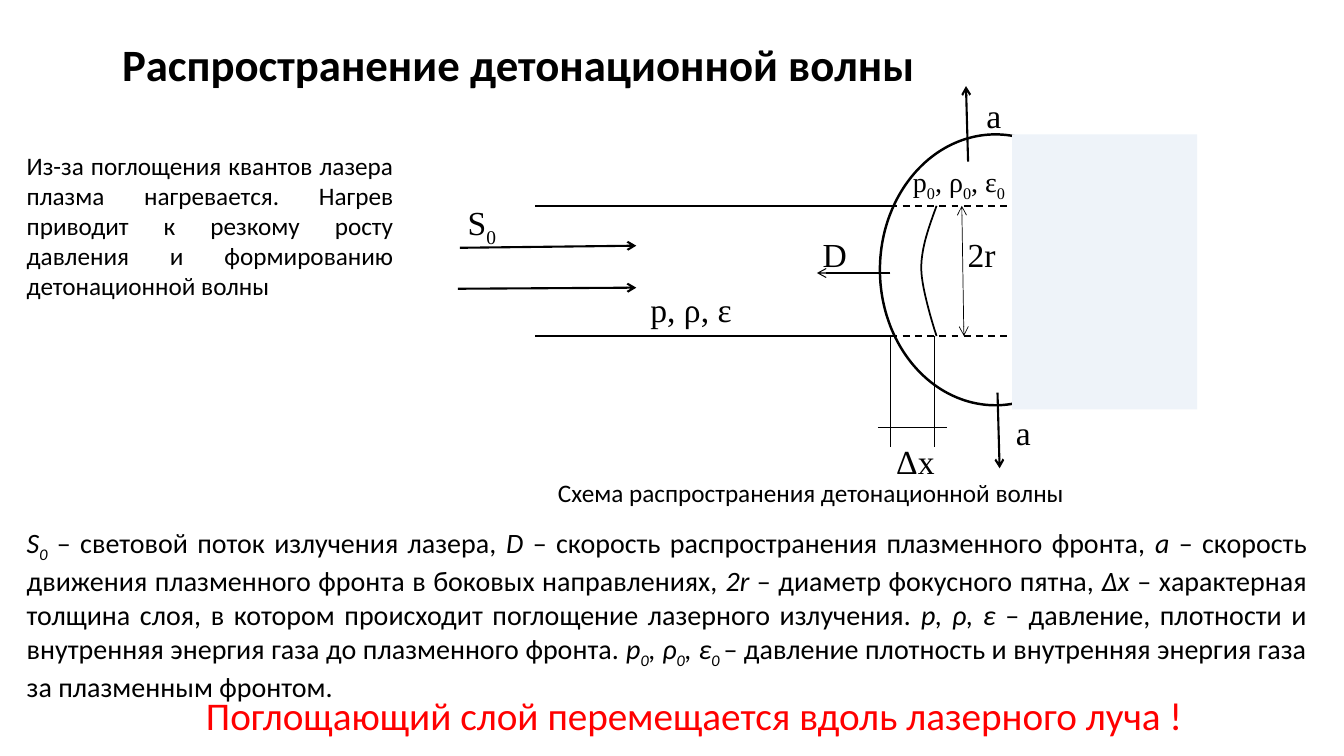
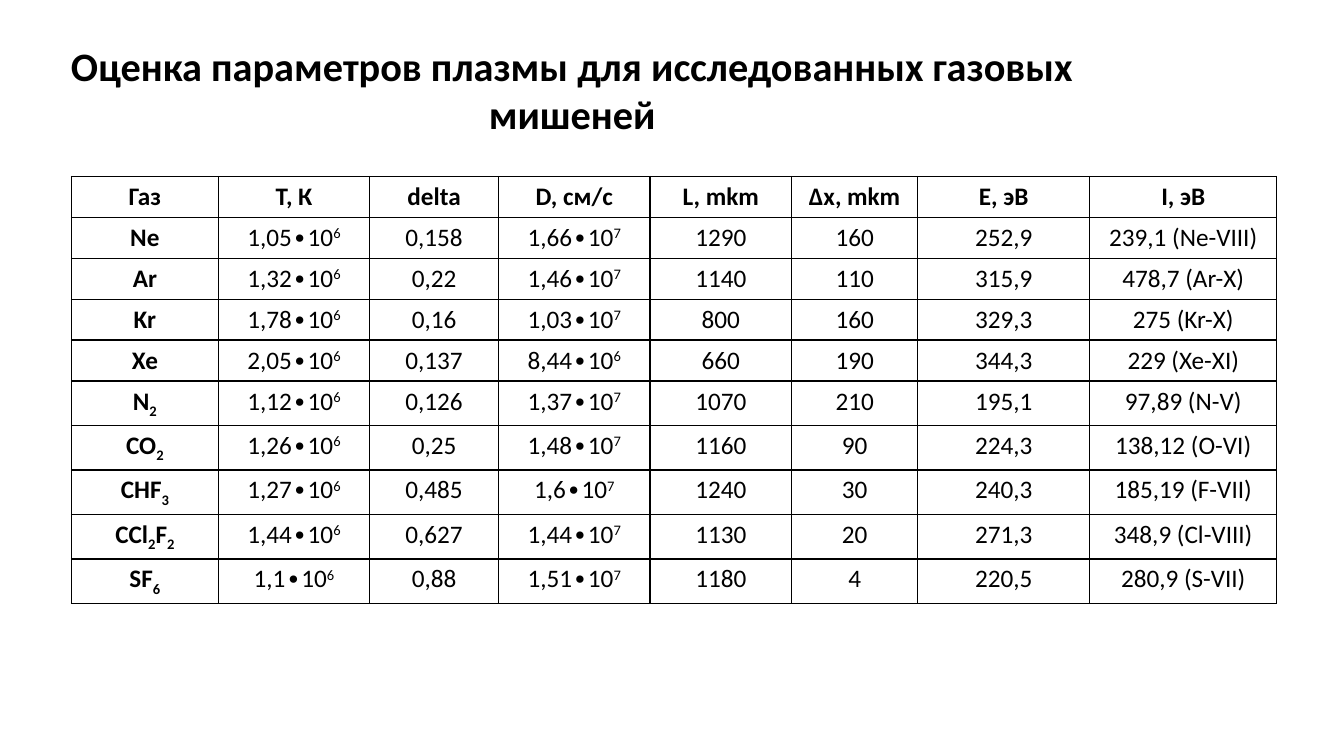
import pptx
import pptx.dml.color
import pptx.enum.dml
import pptx.enum.shapes
import pptx.enum.text
import pptx.oxml
import pptx.oxml.ns
import pptx.util

ALIGN = pptx.enum.text.PP_ALIGN
SHAPE = pptx.enum.shapes.MSO_SHAPE
RGB = pptx.dml.color.RGBColor.from_string
Pt = pptx.util.Pt


class Theme:
    ink, red, pale = RGB("000000"), RGB("FF0000"), RGB("EEF3F9")
    sans, serif = "Calibri", "Times New Roman"
    body = dict(name=sans, size=Pt(18))
    note = dict(name=sans, size=Pt(20))
    call = dict(name=sans, size=Pt(28))
    head = dict(name=sans, size=Pt(32), bold=True)
    long = dict(name=sans, size=Pt(28.8), bold=True)
    mark = dict(name=serif, size=Pt(24))
    small = dict(name=serif, size=Pt(20))


deck = pptx.Presentation()
deck.slide_width = pptx.util.Inches(13.333)
deck.slide_height = pptx.util.Inches(7.5)

# All lengths are cells of a grid with 64 columns and 36 rows
CELL = deck.slide_height / 36


def write(par, text, look, ink=Theme.ink, align=ALIGN.LEFT):
    """Fill a paragraph; *italic*, _subscript_ and ^superscript^ are toggles."""
    par.alignment = align
    live, piece = set(), ""
    for sign in text + "\n":
        if sign not in "*_^\n":
            piece += sign
            continue
        if piece:
            run = par.add_run()
            run.text = piece
            for key, value in dict(look, italic="*" in live).items():
                setattr(run.font, key, value)
            run.font.color.rgb = ink
            for key, base in (("_", "-25000"), ("^", "30000")):
                if key in live:
                    run._r.get_or_add_rPr().set("baseline", base)
        live ^= {sign}
        piece = ""


def put(page, at, text, look, ink=Theme.ink, align=ALIGN.LEFT):
    """Add a text box at a place given in cells."""
    box = page.shapes.add_textbox(*(int(n * CELL) for n in at))
    box.text_frame.word_wrap = True
    write(box.text_frame.paragraphs[0], text, look, ink, align)
    return box.text_frame


# Pages and their titles
pages = []
for at, text, look in (
    ((0, 0.6, 49.4, 4.9), "Распространение детонационной волны", Theme.head),
    ((0.7, 2.2, 53.1, 4.1),
     "Оценка параметров плазмы для исследованных газовых мишеней", Theme.long),
):
    page = deck.slides.add_slide(deck.slide_layouts[6])
    frame = put(page, at, text, look, align=ALIGN.CENTER)
    frame.vertical_anchor = pptx.enum.text.MSO_ANCHOR.MIDDLE
    pages.append(page)
wave, gases = pages

# Wave front: outline of the plasma
top, low = 9.8, 16
left, front, back, end = 25.5, 42.4, 44.5, 49.6
oval = wave.shapes.add_shape(
    SHAPE.OVAL, *(int(n * CELL) for n in (41.9, 6.4, 11, 12.9)))

# Curved layer: two Bezier arcs drawn in short steps
arcs = (
    ((44.6, top), (44.26, 10.75), (43.87, 11.76), (43.87, 12.77)),
    ((43.87, 12.77), (43.87, 13.82), (44.6, low), (44.6, low)),
)
steps = 16
dots = []
for arc in arcs:
    for step in range(1, steps + 1):
        t = step / steps
        rate = ((1 - t) ** 3, 3 * t * (1 - t) ** 2, 3 * t * t * (1 - t), t ** 3)
        dots.append(tuple(
            int(CELL * sum(k * dot[axis] for k, dot in zip(rate, arc)))
            for axis in (0, 1)))
trace = wave.shapes.build_freeform(*(int(n * CELL) for n in arcs[0][0]))
trace.add_line_segments(dots, close=False)
curve = trace.convert_to_shape()
for shape, width in ((oval, 1.75), (curve, 1.25)):
    shape.shadow.inherit = False
    shape.fill.background()
    shape.line.color.rgb = Theme.ink
    shape.line.width = Pt(width)

# Lines and arrows: from, to, width, arrow ends, dashed
for x1, y1, x2, y2, width, tips, dash in (
    (left, top, front, top, 1.75, (), False),
    (left, low, front, low, 1.75, (), False),
    (front, top, end, top, 1.25, (), True),
    (front, low, end, low, 1.25, (), True),
    (front, low, front, 21.3, 1, (), False),
    (back, low, back, 21.3, 1, (), False),
    (41.8, 20.35, 45.1, 20.35, 0.5, (), False),
    (45.8, top, 45.9, low, 0.5, ("headEnd", "tailEnd"), False),
    (21.9, 11.8, 30.3, 11.7, 1.5, ("tailEnd",), False),
    (21.8, 13.75, 30.3, 13.7, 1.5, ("tailEnd",), False),
    (front, 13, 38.9, 13, 0.75, ("tailEnd",), False),
    (47.5, 18.7, 47.6, 22.3, 1.5, ("tailEnd",), False),
    (46.1, 7.7, 46, 4.1, 1.5, ("tailEnd",), False),
):
    line = wave.shapes.add_connector(
        pptx.enum.shapes.MSO_CONNECTOR.STRAIGHT,
        *(int(n * CELL) for n in (x1, y1, x2, y2)))
    line.line.color.rgb = Theme.ink
    line.line.width = Pt(width)
    if dash:
        line.line.dash_style = pptx.enum.dml.MSO_LINE.DASH
    pen = line.line._get_or_add_ln()
    for tip in tips:
        pen.append(pptx.oxml.parse_xml(
            f'<a:{tip} {pptx.oxml.ns.nsdecls("a")} type="arrow"/>'))
    line._element.spPr.append(pptx.oxml.parse_xml(
        f'<a:effectLst {pptx.oxml.ns.nsdecls("a")}/>'))

# Marks on the scheme
for x, y, wide, text, look in (
    (47.9, 19.4, 4, "a", Theme.mark),
    (46.5, 4.3, 3.3, "a", Theme.mark),
    (45.6, 10.9, 4, "2r", Theme.mark),
    (42.2, 20.75, 4, "Δx", Theme.mark),
    (21.8, 9.4, 5.4, "S_0_", Theme.mark),
    (38.7, 10.9, 4, "D", Theme.mark),
    (30.5, 13.5, 8.3, "p, ρ, ε", Theme.mark),
    (43, 7.6, 8.3, "p_0_, ρ_0_, ε_0_", Theme.small),
):
    put(wave, (x, y, wide, 2.5), text, look)

# Pale block over the right half of the plasma
block = wave.shapes.add_shape(
    SHAPE.RECTANGLE, *(int(n * CELL) for n in (48.2, 6.4, 8.8, 13.1)))
block.shadow.inherit = False
block.fill.solid()
block.fill.fore_color.rgb = Theme.pale
block.line.fill.background()

# Texts around the scheme
put(wave, (0.8, 6.9, 18.4, 7.8),
    "Из-за поглощения квантов лазера плазма нагревается. Нагрев приводит "
    "к резкому росту давления и формированию детонационной волны",
    Theme.body, align=ALIGN.JUSTIFY)
put(wave, (26.1, 22.5, 27.5, 2),
    "Схема распространения детонационной волны", Theme.body)
put(wave, (0.8, 24.8, 61.9, 10),
    "*S_0_* – световой поток излучения лазера, *D* – скорость распространения "
    "плазменного фронта, *a* – скорость движения плазменного фронта в боковых "
    "направлениях, *2r *– диаметр фокусного пятна, *Δx* – характерная толщина "
    "слоя, в котором происходит поглощение лазерного излучения*. p, ρ, ε *– "
    "давление, плотности и внутренняя энергия газа до плазменного фронта. "
    "*p_0_, ρ_0_, ε_0 _*– давление плотность и внутренняя энергия газа "
    "за плазменным фронтом.", Theme.note, align=ALIGN.JUSTIFY)
put(wave, (4.7, 32.7, 56.7, 2.7),
    "Поглощающий слой перемещается вдоль лазерного луча !",
    Theme.call, Theme.red, ALIGN.CENTER)

# Table of plasma values
rows = [row.split("; ") for row in (
    "Газ; Т, К; delta; D, см/с; L, mkm; Δх, mkm; Ε, эВ; I, эВ",
    "Ne; 1,05∙10^6^; 0,158; 1,66∙10^7^; 1290; 160; 252,9; 239,1 (Ne-VIII)",
    "Ar; 1,32∙10^6^; 0,22; 1,46∙10^7^; 1140; 110; 315,9; 478,7 (Ar-X)",
    "Kr; 1,78∙10^6^; 0,16; 1,03∙10^7^; 800; 160; 329,3; 275 (Kr-X)",
    "Xe; 2,05∙10^6^; 0,137; 8,44∙10^6^; 660; 190; 344,3; 229 (Xe-XI)",
    "N_2_; 1,12∙10^6^; 0,126; 1,37∙10^7^; 1070; 210; 195,1; 97,89 (N-V)",
    "CO_2_; 1,26∙10^6^; 0,25; 1,48∙10^7^; 1160; 90; 224,3; 138,12 (O-VI)",
    "CHF_3_; 1,27∙10^6^; 0,485; 1,6∙10^7^; 1240; 30; 240,3; 185,19 (F-VII)",
    "CCl_2_F_2_; 1,44∙10^6^; 0,627; 1,44∙10^7^; 1130; 20; 271,3; 348,9 (Cl-VIII)",
    "SF_6_; 1,1∙10^6^; 0,88; 1,51∙10^7^; 1180; 4; 220,5; 280,9 (S-VII)",
)]
wides = (7, 7.2, 6.15, 7.2, 6.75, 6, 8.2, 8.9)
high = 1.95
grid = gases.shapes.add_table(
    len(rows), len(wides),
    *(int(n * CELL) for n in (3.4, 8.4, sum(wides), high * len(rows)))).table
grid.first_row = grid.horz_banding = False
for col, wide in zip(grid.columns, wides):
    col.width = int(wide * CELL)
for r, row in enumerate(rows):
    grid.rows[r].height = int(high * CELL)
    for c, text in enumerate(row):
        cell = grid.cell(r, c)
        for side in "LRTB":
            cell._tc.get_or_add_tcPr().append(pptx.oxml.parse_xml(
                f'<a:ln{side} {pptx.oxml.ns.nsdecls("a")} w="{int(Pt(1))}"><a:solidFill>'
                f'<a:srgbClr val="{Theme.ink}"/></a:solidFill></a:ln{side}>'))
        cell.fill.background()
        write(cell.text_frame.paragraphs[0], text,
              dict(Theme.body, bold=r == 0 or c == 0), align=ALIGN.CENTER)

deck.save("out.pptx")
